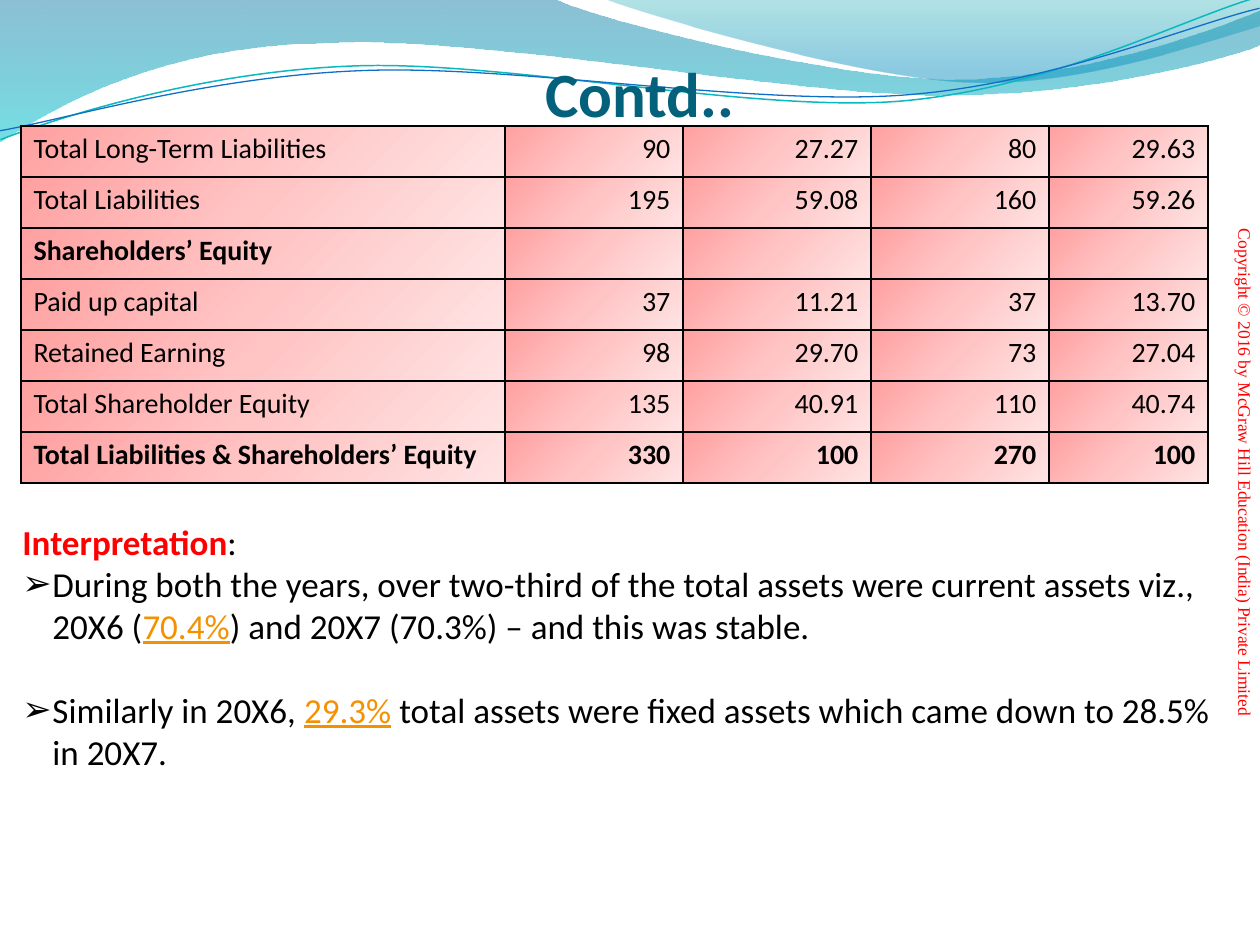
"""Build the balance sheet continuation slide with its interpretation."""
from lxml import etree
from pptx import Presentation
from pptx.dml.color import RGBColor
from pptx.enum.text import MSO_ANCHOR, PP_ALIGN
from pptx.oxml.ns import qn
from pptx.util import Pt

PX = 914400 / 126
LEFT, CENTER, RIGHT = PP_ALIGN.LEFT, PP_ALIGN.CENTER, PP_ALIGN.RIGHT
TOP, BOTTOM = MSO_ANCHOR.TOP, MSO_ANCHOR.BOTTOM
BLACK = RGBColor(0x00, 0x00, 0x00)
RED = RGBColor(0xFF, 0x00, 0x00)
ORANGE = RGBColor(0xF4, 0x91, 0x00)
TITLE_BLUE = RGBColor(0x04, 0x61, 0x7B)
LINE_TEAL = RGBColor(0x0A, 0xB8, 0xBF)
LINE_BLUE = RGBColor(0x0F, 0x6F, 0xC6)
DEEP_BLUE = RGBColor(0x00, 0x74, 0xA1)
AQUA = RGBColor(0x00, 0xC6, 0xCF)
TEAL = RGBColor(0x00, 0xA1, 0xA9)
SKY = RGBColor(0x00, 0x8B, 0xBF)
PINK_DARK = RGBColor(0xFF, 0xA0, 0xA0)
PINK = RGBColor(0xFF, 0xC5, 0xC5)
PINK_LIGHT = RGBColor(0xFF, 0xE3, 0xE3)
CELL_STOPS = [(0, PINK_DARK, 100), (50, PINK, 100), (100, PINK_LIGHT, 100)]

BROAD_RIBBON = [
    (0, 0), (554, -1),
    (600, 21, 837, 79, 955, 79), (1075, 79, 1207, 33, 1260, 11), (1261, 45),
    (1239, 55, 1096, 96, 940, 95), (784, 95, 481, 35, 324, 43),
    (163, 45, 58, 105, -1, 142), (0, 0),
]
RIGHT_RIBBON = [
    (604, -1), (641, 14, 859, 78, 969, 82), (1079, 87, 1211, 40, 1260, 26),
    (1260, 0), (604, -1),
]
TEAL_WAVE = [
    (-2, 110), (59, 90, 200, 52, 350, 53), (499, 53, 745, 118, 896, 114),
    (1049, 109, 1184, 45, 1260, 27),
]
BLUE_WAVE = [
    (-2, 101), (57, 94, 207, 57, 358, 58), (509, 58, 750, 112, 902, 108),
    (1052, 104, 1188, 52, 1262, 38),
]
WAVE_TILT = 357.3

COLUMNS = [484, 178, 188, 178, 159]
BALANCE_ROWS = [
    (["Total Long-Term Liabilities", "90", "27.27", "80", "29.63"], False),
    (["Total Liabilities", "195", "59.08", "160", "59.26"], False),
    (["Shareholders’ Equity", "", "", "", ""], True),
    (["Paid up capital", "37", "11.21", "37", "13.70"], False),
    (["Retained Earning", "98", "29.70", "73", "27.04"], False),
    (["Total Shareholder Equity", "135", "40.91", "110", "40.74"], False),
    (["Total Liabilities & Shareholders’ Equity", "330", "100", "270", "100"], True),
]


def px(length):
    return round(length * PX)


def gradient(stops, angle):
    """Return a gradient fill element from (position, colour, opacity) stops."""
    fill = etree.Element(qn("a:gradFill"), rotWithShape="1")
    stop_list = etree.SubElement(fill, qn("a:gsLst"))
    for position, color, opacity in stops:
        stop = etree.SubElement(stop_list, qn("a:gs"), pos=str(position * 1000))
        rgb = etree.SubElement(stop, qn("a:srgbClr"), val=str(color))
        if opacity < 100:
            etree.SubElement(rgb, qn("a:alpha"), val=str(opacity * 1000))
    etree.SubElement(fill, qn("a:lin"), ang=str(angle * 60000), scaled="0")
    return fill


class SlideBuilder:
    """Hold the style and the current slide."""

    font = "Calibri"

    def __init__(self, slide):
        self.slide = slide

    def outline(self, segments, closed):
        """Draw straight (x, y) and cubic (x1, y1, x2, y2, x, y) segments."""
        start, *rest = segments
        builder = self.slide.shapes.build_freeform(*start, scale=PX)
        for segment in rest:
            builder.add_line_segments(list(zip(segment[::2], segment[1::2])), close=False)
        shape = builder.convert_to_shape()
        shape.shadow.inherit = False
        lines = list(shape.element.iter(qn("a:lnTo")))
        contour = lines[0].getparent()
        for segment in rest:
            pieces, lines = lines[:len(segment) // 2], lines[len(segment) // 2:]
            if len(pieces) == 3:
                curve = etree.Element(qn("a:cubicBezTo"))
                pieces[0].addprevious(curve)
                for piece in pieces:
                    curve.append(piece[0])
                    contour.remove(piece)
        if closed:
            etree.SubElement(contour, qn("a:close"))
        return shape

    def ribbon(self, segments, stops):
        shape = self.outline(segments, True)
        shape.line.fill.background()
        geometry = shape.element.spPr.find(qn("a:custGeom"))
        geometry.addnext(gradient(stops, 90))

    def wave(self, segments, color, width):
        shape = self.outline(segments, False)
        shape.rotation = WAVE_TILT
        shape.fill.background()
        shape.line.color.rgb = color
        shape.line.width = Pt(width)

    def run(self, paragraph, text, size, color=BLACK, bold=False, underline=False, font=None):
        run = paragraph.add_run()
        run.text = text
        run.font.name = font or self.font
        run.font.size = Pt(size)
        run.font.bold = bold
        run.font.underline = underline
        run.font.color.rgb = color

    def text_box(self, x, y, width, height, anchor=TOP, rotation=0):
        box = self.slide.shapes.add_textbox(px(x), px(y), px(width), px(height))
        box.rotation = rotation
        box.text_frame.word_wrap = True
        box.text_frame.vertical_anchor = anchor
        return box.text_frame

    def label(self, area, text, size, color, anchor=TOP, rotation=0, **style):
        paragraph = self.text_box(*area, anchor, rotation).paragraphs[0]
        paragraph.alignment = CENTER
        self.run(paragraph, text, size, color, **style)

    def bullet(self, frame, before, figure, after, gap=0):
        paragraph = frame.add_paragraph()
        properties = paragraph._p.get_or_add_pPr()
        properties.set("marL", str(px(30)))
        properties.set("indent", str(-px(30)))
        etree.SubElement(properties, qn("a:buFont"), typeface=self.font)
        etree.SubElement(properties, qn("a:buChar"), char="➢")
        paragraph.space_before = Pt(gap)
        self.run(paragraph, before, 20)
        self.run(paragraph, figure, 20, ORANGE, underline=True)
        self.run(paragraph, after, 20)

    def cell_style(self, cell):
        properties = cell._tc.get_or_add_tcPr()
        for side in ("a:lnL", "a:lnR", "a:lnT", "a:lnB"):
            border = etree.SubElement(properties, qn(side), w=str(Pt(1)))
            fill = etree.SubElement(border, qn("a:solidFill"))
            etree.SubElement(fill, qn("a:srgbClr"), val=str(BLACK))
        properties.append(gradient(CELL_STOPS, 45))

    def table(self, x, y, columns, row_height, rows):
        table = self.slide.shapes.add_table(
            len(rows), len(columns), px(x), px(y),
            px(sum(columns)), px(row_height * len(rows))).table
        table.first_row = table.horz_banding = False
        for column, width in zip(table.columns, columns):
            column.width = px(width)
        for table_row, (values, bold) in zip(table.rows, rows):
            table_row.height = px(row_height)
            for index, (cell, value) in enumerate(zip(table_row.cells, values)):
                self.cell_style(cell)
                if value:
                    paragraph = cell.text_frame.paragraphs[0]
                    paragraph.alignment = RIGHT if index else LEFT
                    self.run(paragraph, value, 16, bold=bold)


def main():
    presentation = Presentation()
    presentation.slide_width, presentation.slide_height = px(1260), px(945)
    builder = SlideBuilder(presentation.slides.add_slide(presentation.slide_layouts[6]))

    builder.ribbon(BROAD_RIBBON, [(0, DEEP_BLUE, 45), (100, AQUA, 55)])
    builder.ribbon(RIGHT_RIBBON, [(0, TEAL, 30), (80, SKY, 45)])
    builder.wave(TEAL_WAVE, LINE_TEAL, 0.85)
    builder.wave(BLUE_WAVE, LINE_BLUE, 0.75)
    builder.label((861, 441, 798, 63),
                  "Copyright © 2016 by McGraw Hill Education (India) Private Limited",
                  10, RED, font="Times New Roman", anchor=BOTTOM, rotation=90)
    builder.table(21, 126, COLUMNS, 51, BALANCE_ROWS)

    interpretation = builder.text_box(10, 514, 1229, 310)
    heading = interpretation.paragraphs[0]
    builder.run(heading, "Interpretation", 20, RED, bold=True)
    builder.run(heading, ":", 20)
    builder.bullet(interpretation,
                   "During both the years, over two-third of the total assets were "
                   "current assets viz., 20X6 (",
                   "70.4%", ") and 20X7 (70.3%) – and this was stable.")
    builder.bullet(interpretation, "Similarly in 20X6, ", "29.3%",
                   " total assets were fixed assets which came down to 28.5% in 20X7.", gap=24)
    builder.label((451, 48, 378, 89), "Contd..", 36, TITLE_BLUE, bold=True)
    presentation.save("out.pptx")


if __name__ == "__main__":
    main()
